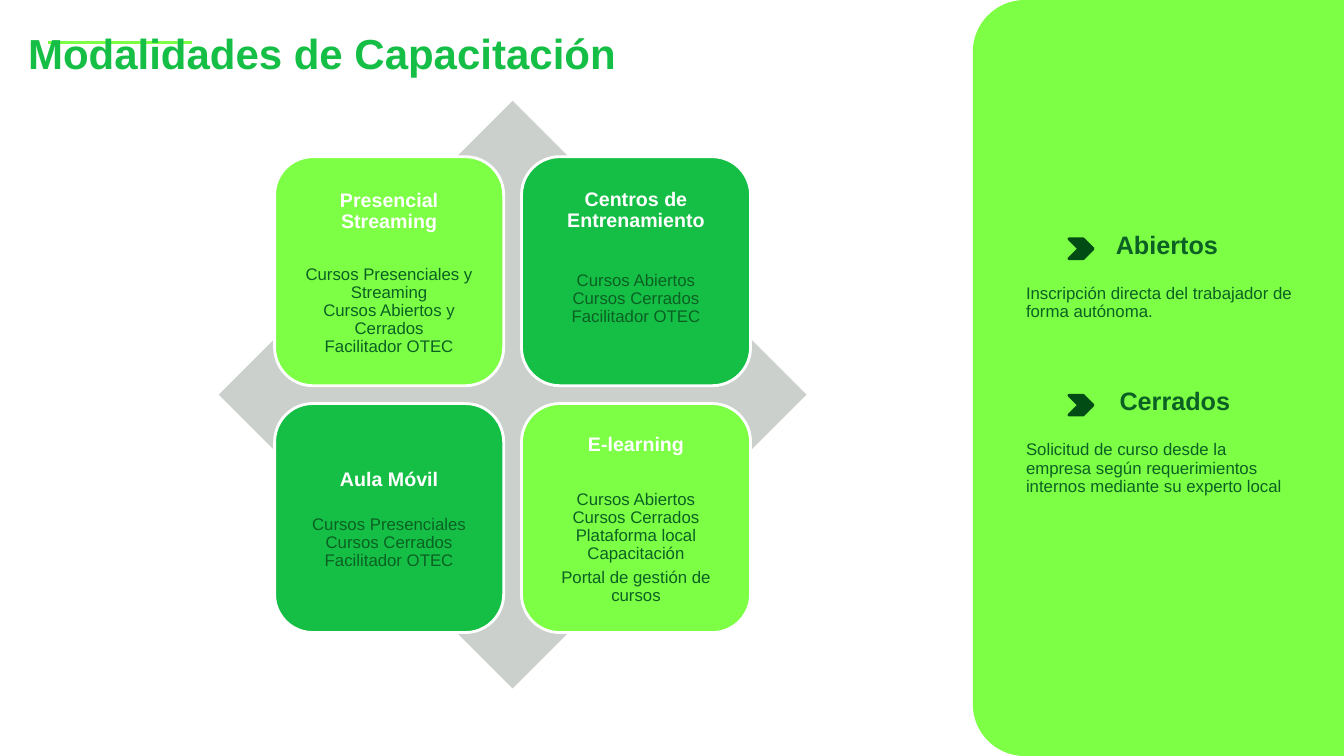
from lxml import etree
from pptx import Presentation
from pptx.dml.color import RGBColor
from pptx.enum.shapes import MSO_CONNECTOR, MSO_SHAPE as Shape
from pptx.enum.text import MSO_ANCHOR as Anchor, PP_ALIGN as Align
from pptx.oxml.ns import qn
from pptx.util import Cm, Pt

COLORS = {
    "lime": "7CFF44",
    "green": "15BF45",
    "forest": "0B6023",
    "dark": "014B14",
    "gray": "CCD0CC",
    "white": "FFFFFF",
}
SLIDE_W, SLIDE_H = 33.86, 19.05

# heading, fill, distance above heading (cm), gap below heading (pt), blocks of lines
CARDS = [
    ("Presencial Streaming", "lime", 0.57, 23.5,
     [["Cursos Presenciales y Streaming", "Cursos Abiertos y Cerrados", "Facilitador OTEC"]]),
    ("Centros de Entrenamiento", "green", 0.55, 28.5,
     [["Cursos Abiertos", "Cursos Cerrados", "Facilitador OTEC"]]),
    ("Aula Móvil", "green", 1.38, 17.8,
     [["Cursos Presenciales", "Cursos Cerrados", "Facilitador OTEC"]]),
    ("E-learning", "lime", 0.5, 25,
     [["Cursos Abiertos", "Cursos Cerrados", "Plataforma local", "Capacitación"],
      ["Portal de gestión de cursos"]]),
]

# heading, heading shift (cm), top (cm), description
ENROLLMENTS = [
    ("Abiertos", 2.54, 5.74, "Inscripción directa del trabajador de forma autónoma."),
    ("Cerrados", 2.74, 9.68, "Solicitud de curso desde la empresa según requerimientos "
                             "internos mediante su experto local"),
]


def rgb(name):
    return RGBColor.from_string(COLORS[name])


def add_filled(slide, kind, box, fill, line=None):
    shape = slide.shapes.add_shape(kind, *map(Cm, box))
    shape.shadow.inherit = False
    shape.fill.solid()
    shape.fill.fore_color.rgb = rgb(fill)
    if line:
        shape.line.color.rgb = rgb(line)
        shape.line.width = Pt(2)
    else:
        shape.line.fill.background()
    return shape


def write(paragraph, lines, size, color, bold=False, align=Align.LEFT):
    """Fill a paragraph with one run per line, split by line breaks."""
    paragraph.alignment = align
    paragraph.line_spacing = 0.9
    for index, line in enumerate(lines):
        if index:
            paragraph.add_line_break()
        run = paragraph.add_run()
        run.text = line
        run.font.name = "Arial"
        run.font.size = Pt(size)
        run.font.bold = bold
        run.font.color.rgb = rgb(color)


def add_label(slide, box, text, size, color, bold=False, align=Align.LEFT):
    frame = slide.shapes.add_textbox(*map(Cm, box)).text_frame
    frame.word_wrap = True
    write(frame.paragraphs[0], [text], size, color, bold, align)
    return frame


def add_title(slide, left, top, width, height):
    accent_y = Cm(top + 0.79)
    accent = slide.shapes.add_connector(
        MSO_CONNECTOR.STRAIGHT, Cm(left + 0.66), accent_y, Cm(left + 4.27), accent_y)
    accent.line.color.rgb = rgb("lime")
    accent.line.width = Pt(1.75)
    etree.SubElement(accent.element.spPr, qn("a:effectLst"))
    frame = add_label(slide, (left, top, width, height),
                      "Modalidades de Capacitación", 30, "green", True)
    frame.vertical_anchor = Anchor.MIDDLE
    frame.margin_left = frame.margin_right = Cm(0.15)
    frame.margin_top = frame.margin_bottom = Cm(0.15)


def add_card(slide, box, heading, fill, inset, gap, blocks):
    frame = add_filled(slide, Shape.ROUNDED_RECTANGLE, box, fill, "white").text_frame
    frame.word_wrap = True
    frame.vertical_anchor = Anchor.TOP
    frame.margin_left = frame.margin_right = Cm(0.15)
    frame.margin_top, frame.margin_bottom = Cm(inset), 0
    title = frame.paragraphs[0]
    write(title, [heading], 14, "white", True, Align.CENTER)
    title.space_after = Pt(gap)
    for lines in blocks:
        paragraph = frame.add_paragraph()
        write(paragraph, lines, 12, "forest", align=Align.CENTER)
        paragraph.space_after = Pt(4.3)


def add_matrix(slide, left, top, size):
    """Diamond with a centred two by two grid of cards."""
    add_filled(slide, Shape.DIAMOND, (left, top, size, size), "gray")
    card, pitch = 5.77, 6.22
    margin = (size - card - pitch) / 2
    for index, content in enumerate(CARDS):
        row, column = divmod(index, 2)
        box = (left + margin + column * pitch, top + margin + row * pitch, card, card)
        add_card(slide, box, *content)


def add_enrollment_panel(slide, left, top, width, height):
    # The top-rounded preset is turned a quarter so its round corners face left.
    panel = add_filled(slide, Shape.ROUND_2_SAME_RECTANGLE,
                       (left + (width - height) / 2, top + (height - width) / 2,
                        height, width), "lime")
    panel.rotation = 270
    panel.adjustments[0] = 0.14
    for heading, shift, offset, description in ENROLLMENTS:
        y = top + offset
        add_filled(slide, Shape.CHEVRON, (left + 2.42, y + 0.28, 0.61, 0.5), "dark", "dark")
        add_label(slide, (left + shift, y, 4.7, 0.94), heading, 18, "forest",
                  True, Align.CENTER)
        add_label(slide, (left + 1.09, y + 1.32, 7.32, 1.65), description, 12, "forest")


def main():
    prs = Presentation()
    prs.slide_width, prs.slide_height = Cm(SLIDE_W), Cm(SLIDE_H)
    slide = prs.slides.add_slide(prs.slide_layouts[6])
    panel_left = 24.51
    add_enrollment_panel(slide, panel_left, 0, SLIDE_W - panel_left, SLIDE_H)
    add_matrix(slide, 5.51, 2.54, 14.81)
    add_title(slide, 0.56, 0.28, 16.18, 2.26)
    prs.save("out.pptx")


if __name__ == "__main__":
    main()
